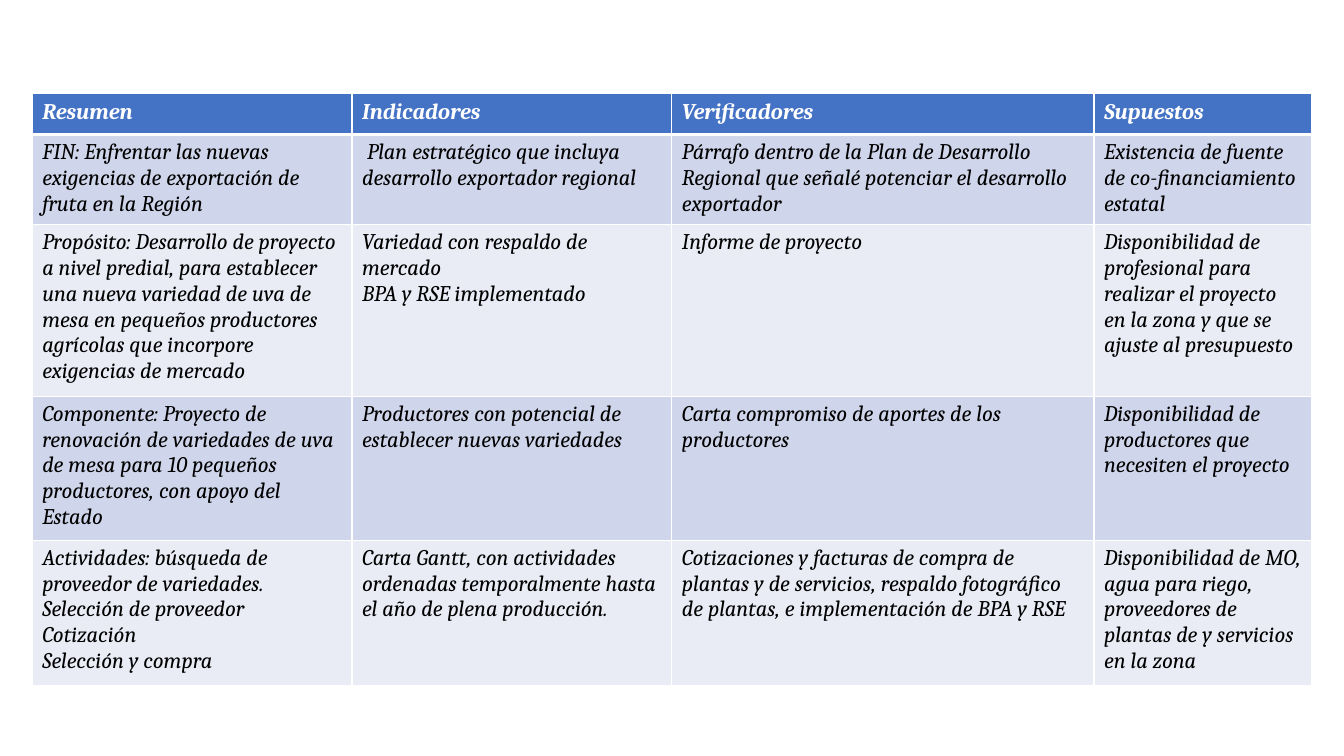
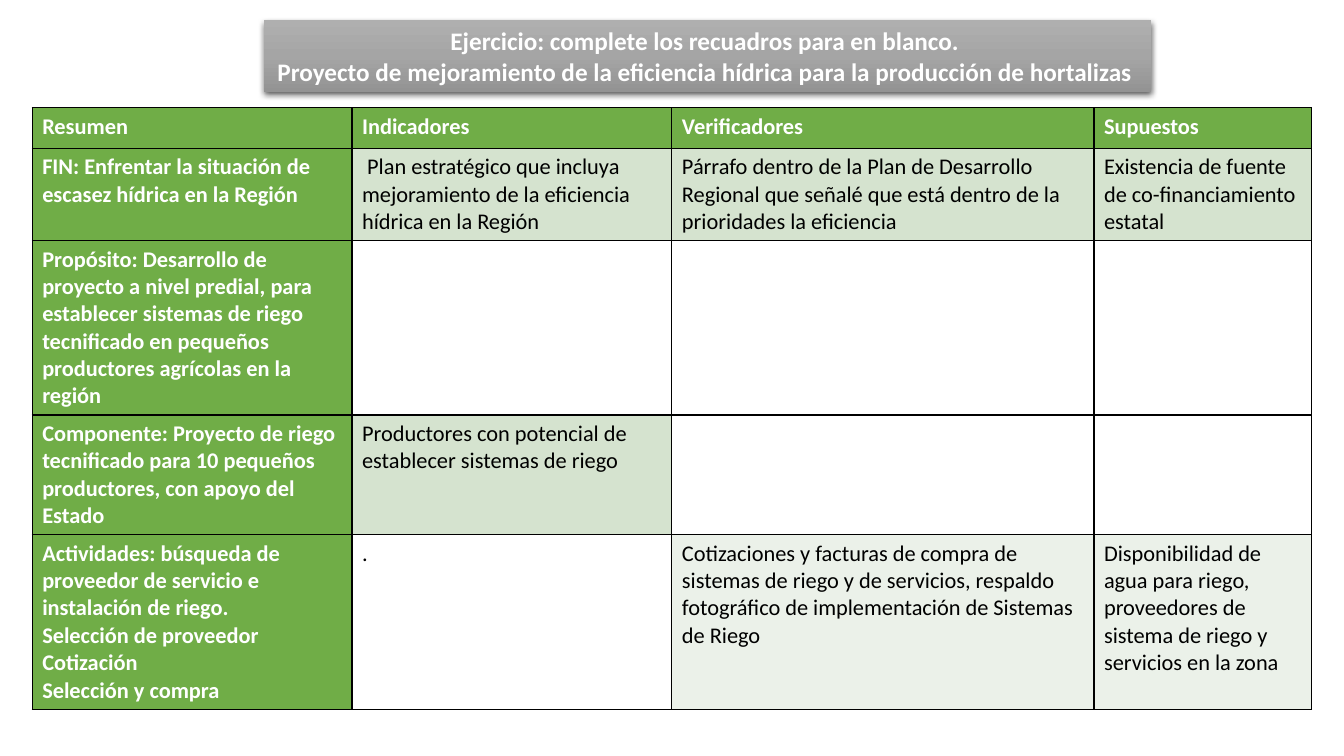
from copy import deepcopy

from lxml import etree
from pptx import Presentation
from pptx.dml.color import RGBColor
from pptx.enum import text
from pptx.oxml import ns
from pptx.util import Pt

WHITE = RGBColor(0xFF, 0xFF, 0xFF)
BLACK = RGBColor(0x00, 0x00, 0x00)
BLUE = RGBColor(0x44, 0x72, 0xC4)
BLUE_BAND = RGBColor(0xCF, 0xD5, 0xEA)
BLUE_PALE = RGBColor(0xE9, 0xEB, 0xF5)
GREEN = RGBColor(0x70, 0xAD, 0x47)
GREEN_BAND = RGBColor(0xD5, 0xE3, 0xCF)
GREEN_PALE = RGBColor(0xEB, 0xF1, 0xE9)
GREY_STOPS = (RGBColor(0xAF, 0xAF, 0xAF), RGBColor(0xA5, 0xA5, 0xA5), RGBColor(0x93, 0x93, 0x93))

TABLE_LEFT = 23
COLUMN_WIDTHS = (228.5, 228.5, 301.5, 155.5)
HEADINGS = ("Resumen", "Indicadores", "Verificadores", "Supuestos")

GRAPE_ROWS = (
    HEADINGS,
    ("FIN: Enfrentar las nuevas exigencias de exportación de fruta en la Región",
     " Plan estratégico que incluya desarrollo exportador regional",
     "Párrafo dentro de la Plan de Desarrollo Regional que señalé potenciar el desarrollo exportador",
     "Existencia de fuente de co-financiamiento estatal"),
    ("Propósito: Desarrollo de proyecto a nivel predial, para establecer una nueva variedad de uva "
     "de mesa en pequeños productores agrícolas que incorpore exigencias de mercado",
     "Variedad con respaldo de mercado\nBPA y RSE implementado",
     "Informe de proyecto",
     "Disponibilidad de profesional para realizar el proyecto en la zona y que se ajuste al presupuesto"),
    ("Componente: Proyecto de renovación de variedades de uva de mesa para 10 pequeños productores, "
     "con apoyo del Estado",
     "Productores con potencial de establecer nuevas variedades",
     "Carta compromiso de aportes de los productores",
     "Disponibilidad de productores que necesiten el proyecto"),
    ("Actividades: búsqueda de proveedor de variedades.\nSelección de proveedor\nCotización\n"
     "Selección y compra",
     "Carta Gantt, con actividades ordenadas temporalmente hasta el año de plena producción.",
     "Cotizaciones y facturas de compra de plantas y de servicios, respaldo fotográfico de plantas, "
     "e implementación de BPA y RSE",
     "Disponibilidad de MO, agua para riego, proveedores de plantas de y servicios en la zona"),
)

IRRIGATION_ROWS = (
    HEADINGS,
    ("FIN: Enfrentar la situación de escasez hídrica en la Región",
     " Plan estratégico que incluya mejoramiento de la eficiencia hídrica en la Región",
     "Párrafo dentro de la Plan de Desarrollo Regional que señalé que está dentro de la prioridades "
     "la eficiencia",
     "Existencia de fuente de co-financiamiento estatal"),
    ("Propósito: Desarrollo de proyecto a nivel predial, para establecer sistemas de riego "
     "tecnificado en pequeños productores agrícolas en la región", "", "", ""),
    ("Componente: Proyecto de riego tecnificado para 10 pequeños productores, con apoyo del Estado",
     "Productores con potencial de establecer sistemas de riego", "", ""),
    ("Actividades: búsqueda de proveedor de servicio e instalación de riego.\n"
     "Selección de proveedor\nCotización\nSelección y compra",
     ".",
     "Cotizaciones y facturas de compra de sistemas de riego y de servicios, respaldo fotográfico "
     "de implementación de Sistemas de Riego",
     "Disponibilidad de agua para riego, proveedores de sistema de riego y servicios en la zona"),
)

TITLE_LINES = (
    "Ejercicio: complete los recuadros para en blanco. ",
    "Proyecto de mejoramiento de la eficiencia hídrica para la producción de hortalizas ",
)


def add_child(parent, tag, **attributes):
    return etree.SubElement(parent, ns.qn(tag), {name: str(value) for name, value in attributes.items()})


def set_font(paragraph, name, size, color, bold, italic=False):
    font = paragraph.font
    font.name, font.size = name, Pt(size)
    font.bold, font.italic = bold, italic
    font.color.rgb = color


def set_borders(cell, color, top=1, bottom=1):
    properties = cell._tc.get_or_add_tcPr()
    for side, width in (("L", 1), ("R", 1), ("T", top), ("B", bottom)):
        line = add_child(properties, f"a:ln{side}", w=Pt(width))
        add_child(add_child(line, "a:solidFill"), "a:srgbClr", val=color)


def fill_cell(cell, color):
    if color is None:
        cell.fill.background()
    else:
        cell.fill.solid()
        cell.fill.fore_color.rgb = color


def add_matrix(slide, top, row_heights, rows, font_name, italic, colors, border, header_rule=1,
               side_header=False):
    """Add a project matrix; colors holds the header, odd-row and even-row fills."""
    header, band, pale = colors
    frame = slide.shapes.add_table(len(rows), len(HEADINGS), Pt(TABLE_LEFT), Pt(top),
                                   Pt(sum(COLUMN_WIDTHS)), Pt(sum(row_heights)))
    table = frame.table
    table.horz_banding = False
    for column, width in zip(table.columns, COLUMN_WIDTHS):
        column.width = Pt(width)
    for row_index, (row, height) in enumerate(zip(rows, row_heights)):
        table.rows[row_index].height = Pt(height)
        for column_index, content in enumerate(row):
            cell = table.cell(row_index, column_index)
            is_header = row_index == 0 or (side_header and column_index == 0)
            set_borders(cell, border,
                        top=header_rule if row_index == 1 else 1,
                        bottom=header_rule if row_index == 0 else 1)
            if is_header:
                fill = header
            elif content in ("", "."):
                fill = None
            else:
                fill = band if row_index % 2 else pale
            fill_cell(cell, fill)
            if content:
                cell.text = content
                for paragraph in cell.text_frame.paragraphs:
                    set_font(paragraph, font_name, 16, WHITE if is_header else BLACK, is_header, italic)


def fill_with_gradient(shape, colors):
    """Fill from top to bottom with three evenly spaced colours."""
    shape.fill.gradient()
    shape.fill.gradient_angle = 270
    stop_list = shape._element.spPr.find(".//" + ns.qn("a:gsLst"))
    stop_list.insert(1, deepcopy(stop_list[0]))
    for index, (stop, color) in enumerate(zip(shape.fill.gradient_stops, colors)):
        stop.position = index / 2
        stop.color.rgb = color


def add_shadow(shape):
    effects = add_child(shape._element.spPr, "a:effectLst")
    shadow = add_child(effects, "a:outerShdw", blurRad=Pt(4.5), dist=Pt(1.5), dir=5400000,
                       algn="ctr", rotWithShape=0)
    add_child(add_child(shadow, "a:srgbClr", val=BLACK), "a:alpha", val=63000)


def format_title(title, lines):
    title.left, title.top, title.width, title.height = Pt(188.5), Pt(14.5), Pt(634), Pt(51)
    fill_with_gradient(title, GREY_STOPS)
    add_shadow(title)
    frame = title.text_frame
    frame.text = "\n".join(lines)
    frame.word_wrap = False
    frame.auto_size = text.MSO_AUTO_SIZE.NONE
    frame.vertical_anchor = text.MSO_ANCHOR.MIDDLE
    for paragraph in frame.paragraphs:
        paragraph.alignment = text.PP_ALIGN.CENTER
        set_font(paragraph, "Calibri", 18, WHITE, True)


def main():
    presentation = Presentation()
    presentation.slide_width, presentation.slide_height = Pt(960), Pt(540)
    title_only, blank = presentation.slide_layouts[5], presentation.slide_layouts[6]

    grape_slide = presentation.slides.add_slide(blank)
    add_matrix(grape_slide, 67, (29, 64.5, 122.5, 103, 103.5), GRAPE_ROWS, "Cambria", True,
               (BLUE, BLUE_BAND, BLUE_PALE), WHITE, header_rule=3)

    irrigation_slide = presentation.slides.add_slide(title_only)
    format_title(irrigation_slide.shapes.title, TITLE_LINES)
    add_matrix(irrigation_slide, 77, (29, 65, 122, 84.5, 122), IRRIGATION_ROWS, "Calibri", False,
               (GREEN, GREEN_BAND, GREEN_PALE), BLACK, side_header=True)

    presentation.save("out.pptx")


if __name__ == "__main__":
    main()
